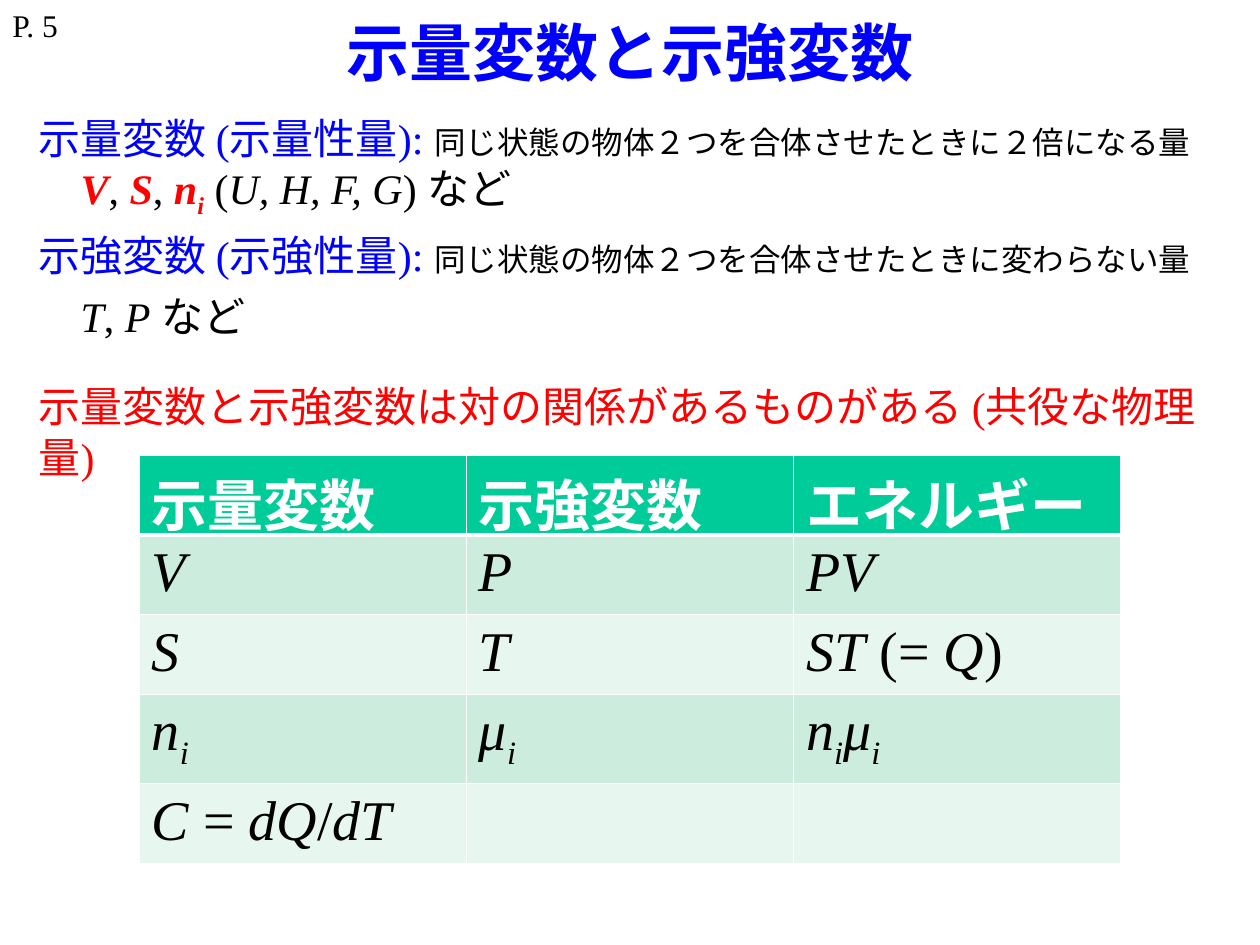
from dataclasses import dataclass

from lxml import etree
from pptx import Presentation
from pptx.dml.color import RGBColor
from pptx.enum.lang import MSO_LANGUAGE_ID
from pptx.enum.text import MSO_ANCHOR, PP_ALIGN
from pptx.oxml.ns import qn
from pptx.util import Pt

JAPANESE = MSO_LANGUAGE_ID.JAPANESE
CENTER = PP_ALIGN.CENTER
MIDDLE, TOP = MSO_ANCHOR.MIDDLE, MSO_ANCHOR.TOP


@dataclass(frozen=True)
class Theme:
    font: str = "Times New Roman"
    blue: str = "0000FF"
    red: str = "FF0000"
    black: str = "000000"
    white: str = "FFFFFF"
    header: str = "00CC99"
    bands: tuple = ("CCECDE", "E7F6EF")
    title: int = 36
    table: int = 32
    body: int = 24
    small: int = 18


THEME = Theme()
ITALIC = {"italic": True}
SUBSCRIPT = {"italic": True, "subscript": True}
KEY = {"italic": True, "bold": True, "color": THEME.red}
KEY_SUBSCRIPT = {**KEY, "subscript": True}
TERM = {"color": THEME.blue}
NOTE = {"size": THEME.small}

EXTENSIVE = [("示量変数 (示量性量): ", TERM),
             ("同じ状態の物体２つを合体させたときに２倍になる量", NOTE)]
EXTENSIVE_EXAMPLES = [("　", ITALIC), ("V", KEY), (", ", {}), ("S", KEY), (", ", {}),
                      ("n", KEY), ("i", KEY_SUBSCRIPT), (" (", {}),
                      ("U, H, F, G", ITALIC), (") など", {})]
INTENSIVE = [("示強変数 (示強性量): ", TERM),
             ("同じ状態の物体２つを合体させたときに変わらない量", NOTE)]
INTENSIVE_EXAMPLES = [("　", ITALIC), ("T", ITALIC), (", ", {}), ("P", ITALIC),
                      (" など", {})]

N_I = [("n", ITALIC), ("i", SUBSCRIPT)]
MU_I = [("μ", ITALIC), ("i", SUBSCRIPT)]
HEADINGS = ["示量変数", "示強変数", "エネルギー"]
CONJUGATES = [
    [[("V", ITALIC)], [("P", ITALIC)], [("PV", ITALIC)]],
    [[("S", ITALIC)], [("T", ITALIC)],
     [("ST", ITALIC), (" (= ", {}), ("Q", ITALIC), (")", {})]],
    [N_I, MU_I, N_I + MU_I],
    [[("C", ITALIC), (" = ", {}), ("dQ", ITALIC), ("/", {}), ("dT", ITALIC)], [], []],
]


def add_runs(paragraph, runs, size, color=THEME.black, bold=False):
    """Append (text, style) runs; each style overrides the given defaults."""
    for text, style in runs:
        run = paragraph.add_run()
        run.text = text
        values = {"name": THEME.font, "size": Pt(style.get("size", size)),
                  "bold": style.get("bold", bold),
                  "italic": style.get("italic", False), "language_id": JAPANESE}
        for name, value in values.items():
            setattr(run.font, name, value)
        run.font.color.rgb = RGBColor.from_string(style.get("color", color))
        if style.get("subscript"):
            run.font._element.set("baseline", "-25000")


def add_text_frame(slide, box, wrap=True, anchor=TOP):
    frame = slide.shapes.add_textbox(*map(Pt, box)).text_frame
    frame.word_wrap = wrap
    frame.vertical_anchor = anchor
    return frame


def add_definitions(slide, box):
    frame = add_text_frame(slide, box)
    add_runs(frame.paragraphs[0], EXTENSIVE, THEME.body)
    add_runs(frame.add_paragraph(), EXTENSIVE_EXAMPLES, THEME.body)
    intensive = frame.add_paragraph()
    intensive.line_spacing = 1.2
    add_runs(intensive, INTENSIVE, THEME.body)
    intensive.add_line_break()
    add_runs(intensive, INTENSIVE_EXAMPLES, THEME.body)


def add_title(slide, box):
    paragraph = add_text_frame(slide, box, anchor=MIDDLE).paragraphs[0]
    paragraph.alignment = CENTER
    add_runs(paragraph, [("示量変数と示強変数", {})], THEME.title, THEME.blue, True)


def add_page_number(slide, box):
    frame = add_text_frame(slide, box, wrap=False)
    add_runs(frame.paragraphs[0], [("P. 5", {})], THEME.small)


def add_conjugate_note(slide, box):
    text = "示量変数と示強変数は対の関係があるものがある (共役な物理量)"
    frame = add_text_frame(slide, box)
    add_runs(frame.paragraphs[0], [(text, {})], THEME.body, THEME.red)


def set_borders(cell, widths):
    """Draw white borders from a dict of side letter to width in points."""
    properties = cell._tc.get_or_add_tcPr()
    for index, (side, width) in enumerate(widths.items()):
        line = etree.Element(qn(f"a:ln{side}"), w=str(Pt(width)))
        fill = etree.SubElement(line, qn("a:solidFill"))
        etree.SubElement(fill, qn("a:srgbClr"), val=THEME.white)
        properties.insert(index, line)


def add_conjugate_table(slide, box):
    rows = [[[(heading, {})] for heading in HEADINGS]] + CONJUGATES
    table = slide.shapes.add_table(len(rows), len(HEADINGS), *map(Pt, box)).table
    for row_index, row in enumerate(rows):
        is_header = row_index == 0
        color = THEME.white if is_header else THEME.black
        fill = THEME.header if is_header else THEME.bands[(row_index - 1) % 2]
        borders = {"L": 1, "R": 1, "T": 3 if row_index == 1 else 1,
                   "B": 3 if is_header else 1}
        for column_index, runs in enumerate(row):
            cell = table.cell(row_index, column_index)
            cell.fill.solid()
            cell.fill.fore_color.rgb = RGBColor.from_string(fill)
            set_borders(cell, borders)
            add_runs(cell.text_frame.paragraphs[0], runs, THEME.table, color, is_header)


def main():
    presentation = Presentation()
    presentation.slide_width, presentation.slide_height = Pt(720), Pt(540)
    slide = presentation.slides.add_slide(presentation.slide_layouts[6])
    add_definitions(slide, (15, 60.5, 698, 132))
    add_title(slide, (0, 1, 720, 57))
    add_page_number(slide, (0, 0, 41, 29))
    add_conjugate_table(slide, (79.5, 260, 561, 228))
    add_conjugate_note(slide, (15, 214, 698, 36))
    presentation.save("out.pptx")


if __name__ == "__main__":
    main()
